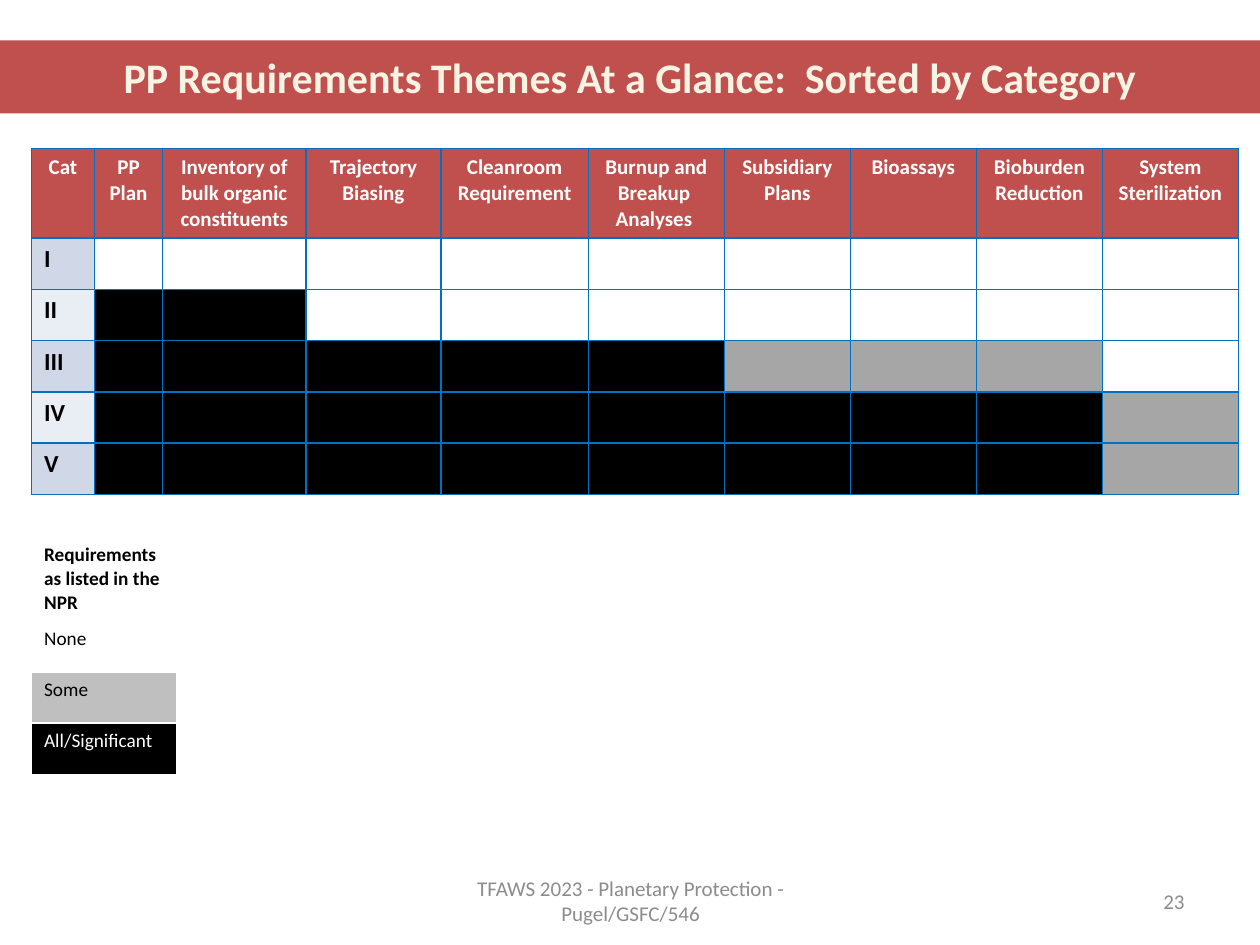
"""Build a slide that maps planetary protection themes to mission categories."""
from dataclasses import dataclass
from typing import Any

from lxml import etree
from pptx import Presentation
from pptx import util as u
from pptx.dml.color import RGBColor
from pptx.enum import shapes, text
from pptx.oxml import ns

RED = RGBColor(0xC0, 0x50, 0x4D)
CREAM = RGBColor(0xF8, 0xF3, 0xE3)
BLUE = RGBColor(0x00, 0x70, 0xC0)
BAND = RGBColor(0xD0, 0xD8, 0xE8)
PALE = RGBColor(0xE9, 0xED, 0xF4)
WHITE = RGBColor(0xFF, 0xFF, 0xFF)
BLACK = RGBColor(0x00, 0x00, 0x00)
GREY = RGBColor(0xA6, 0xA6, 0xA6)
SILVER = RGBColor(0xBF, 0xBF, 0xBF)
DIM = RGBColor(0x8C, 0x8C, 0x8C)

LEFT, MID, RIGHT = text.PP_ALIGN.LEFT, text.PP_ALIGN.CENTER, text.PP_ALIGN.RIGHT
ROW = 0.407
TONES = {"-": WHITE, "s": GREY, "a": BLACK}


@dataclass(frozen=True)
class Style:
    size: float
    color: RGBColor
    bold: bool = False
    align: Any = LEFT


@dataclass(frozen=True)
class Cell:
    words: str
    fill: RGBColor
    style: Style


@dataclass(frozen=True)
class Theme:
    name: str
    width: float


@dataclass(frozen=True)
class Level:
    name: str
    marks: str


@dataclass(frozen=True)
class Grid:
    left: float
    top: float
    widths: list[float]
    heights: list[float]
    cells: list[list[Cell]]
    line: RGBColor


@dataclass(frozen=True)
class Label:
    words: str
    left: float
    width: float
    align: Any


HEAD = Style(12, WHITE, True, MID)
NAME = Style(14, BLACK, True)
KEY = Style(11, BLACK)

THEMES = [
    Theme("Cat", 0.5),
    Theme("PP Plan", 0.54),
    Theme("Inventory of bulk organic constituents", 1.14),
    Theme("Trajectory Biasing", 1.07),
    Theme("Cleanroom Requirement", 1.17),
    Theme("Burnup and Breakup  Analyses ", 1.08),
    Theme("Subsidiary Plans", 1),
    Theme("Bioassays", 1),
    Theme("Bioburden Reduction", 1),
    Theme("System Sterilization", 1.08),
]
LEVELS = [
    Level("I", "---------"),
    Level("II", "aa-------"),
    Level("III", "aaaaasss-"),
    Level("IV", "aaaaaaaas"),
    Level("V", "aaaaaaaas"),
]
LEGEND = [
    Cell("Requirements as listed in the NPR", WHITE, Style(11, BLACK, True)),
    Cell("None", WHITE, KEY),
    Cell("Some", SILVER, KEY),
    Cell("All/Significant", BLACK, Style(11, WHITE)),
]
LABELS = [
    Label("TFAWS 2023 - Planetary Protection - Pugel/GSFC/546", 3.42, 3.17, MID),
    Label("23", 7.17, 2.33, RIGHT),
]


def write(frame: Any, words: str, style: Style) -> None:
    """Put styled words in the first paragraph of a frame."""
    para = frame.paragraphs[0]
    para.alignment = style.align
    run = para.add_run()
    run.text = words
    form = {"name": "Calibri", "size": u.Pt(style.size), "bold": style.bold}
    for key, value in form.items():
        setattr(run.font, key, value)
    run.font.color.rgb = style.color


def edge(cell: Any, color: RGBColor) -> None:
    """Rule all four sides of a cell."""
    props = cell._tc.get_or_add_tcPr()
    for side in ("a:lnL", "a:lnR", "a:lnT", "a:lnB"):
        line = etree.SubElement(props, ns.qn(side), w=str(u.Pt(1)))
        fill = etree.SubElement(line, ns.qn("a:solidFill"))
        etree.SubElement(fill, ns.qn("a:srgbClr"), val=str(color))


def draw_grid(slide: Any, grid: Grid) -> None:
    """Draw a table with filled and ruled cells."""
    size = [u.Inches(sum(part)) for part in (grid.widths, grid.heights)]
    table = slide.shapes.add_table(
        len(grid.heights), len(grid.widths),
        u.Inches(grid.left), u.Inches(grid.top), *size,
    ).table
    table.horz_banding = False
    for col, width in zip(table.columns, grid.widths):
        col.width = u.Inches(width)
    for row, height, items in zip(table.rows, grid.heights, grid.cells):
        row.height = u.Inches(height)
        for cell, item in zip(row.cells, items):
            edge(cell, grid.line)
            cell.fill.solid()
            cell.fill.fore_color.rgb = item.fill
            if item.words:
                write(cell.text_frame, item.words, item.style)


def draw_title(slide: Any, words: str) -> None:
    """Draw the title band."""
    band = slide.shapes.add_shape(
        shapes.MSO_SHAPE.RECTANGLE, 0, u.Inches(0.32), u.Inches(10), u.Inches(0.58)
    )
    band.shadow.inherit = False
    band.fill.solid()
    band.fill.fore_color.rgb = RED
    band.line.fill.background()
    band.text_frame.word_wrap = True
    band.text_frame.vertical_anchor = text.MSO_ANCHOR.MIDDLE
    write(band.text_frame, words, Style(24, CREAM, True, MID))


def draw_label(slide: Any, label: Label) -> None:
    """Draw one piece of footer text."""
    frame = slide.shapes.add_textbox(
        u.Inches(label.left), u.Inches(6.95), u.Inches(label.width), u.Inches(0.4)
    ).text_frame
    form = {"word_wrap": True, "vertical_anchor": text.MSO_ANCHOR.MIDDLE}
    for key, value in form.items():
        setattr(frame, key, value)
    write(frame, label.words, Style(12, DIM, align=label.align))


def main() -> None:
    """Build and save the slide."""
    deck = Presentation()
    deck.slide_width, deck.slide_height = u.Inches(10), u.Inches(7.5)
    slide = deck.slides.add_slide(deck.slide_layouts[6])
    rows = [[Cell(theme.name, RED, HEAD) for theme in THEMES]]
    for count, level in enumerate(LEVELS):
        marks = [Cell("", TONES[mark], NAME) for mark in level.marks]
        rows.append([Cell(level.name, (BAND, PALE)[count % 2], NAME), *marks])
    widths = [theme.width for theme in THEMES]
    draw_grid(slide, Grid(0.25, 1.18, widths, [0.7] + [ROW] * 5, rows, BLUE))
    draw_title(slide, "PP Requirements Themes At a Glance:  Sorted by Category")
    keys = [[cell] for cell in LEGEND]
    draw_grid(slide, Grid(0.25, 4.26, [1.15], [0.65] + [ROW] * 3, keys, WHITE))
    for label in LABELS:
        draw_label(slide, label)
    deck.save("out.pptx")


if __name__ == "__main__":
    main()
